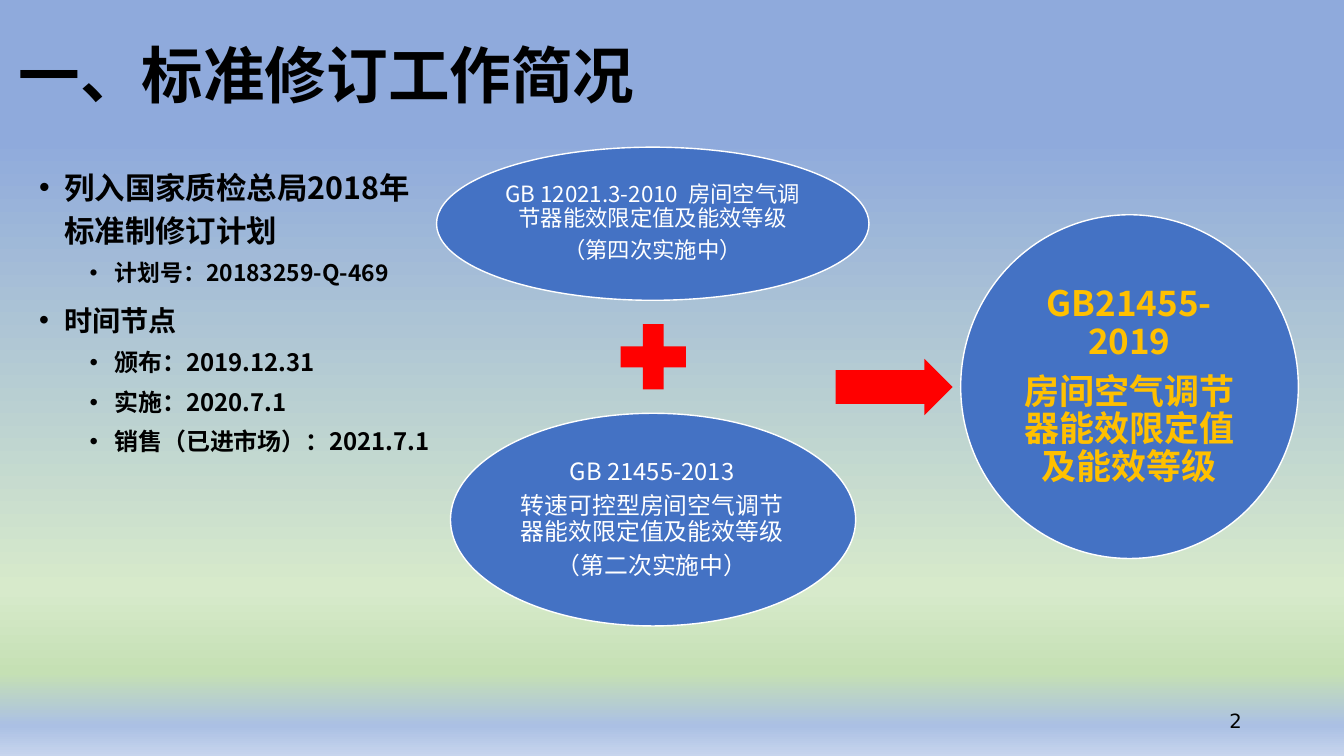
import pptx
import pptx.util
import pptx.oxml
import pptx.oxml.ns
import pptx.dml.color
import pptx.enum.shapes
import pptx.enum.text
from lxml import etree

Pt = pptx.util.Pt
RGB = pptx.dml.color.RGBColor
KIND = pptx.enum.shapes.MSO_SHAPE
ALIGN = pptx.enum.text.PP_ALIGN
MIDDLE = pptx.enum.text.MSO_ANCHOR.MIDDLE
qn = pptx.oxml.ns.qn

BLACK = RGB(0x00, 0x00, 0x00)
WHITE = RGB(0xFF, 0xFF, 0xFF)
BLUE = RGB(0x44, 0x72, 0xC4)
RED = RGB(0xFF, 0x00, 0x00)
GOLD = RGB(0xFF, 0xC0, 0x00)
SKY = [
    (0, RGB(0x8F, 0xAA, 0xDC)),
    (18, RGB(0x8F, 0xAA, 0xDC)),
    (78, RGB(0xD7, 0xEA, 0xCB)),
    (89, RGB(0xC5, 0xE0, 0xB4)),
    (96, RGB(0xAB, 0xC0, 0xE4)),
    (100, RGB(0xC7, 0xD5, 0xED)),
]
FONT = "Noto Sans CJK SC"

# Level, size and text of each point
POINTS = [
    (0, 21.7, "列入国家质检总局2018年标准制修订计划"),
    (1, 16.3, "计划号：20183259-Q-469"),
    (0, 20.1, "时间节点"),
    (1, 17.1, "颁布：2019.12.31"),
    (1, 17.1, "实施：2020.7.1"),
    (1, 17.1, "销售（已进市场）：2021.7.1"),
]


def paint_back(slide):
    fill = slide.background.fill
    fill.gradient()
    fill.gradient_angle = 270
    stops = slide.background._cSld.find(".//" + qn("a:gsLst"))
    for stop in list(stops):
        stops.remove(stop)
    for pos, color in SKY:
        stop = etree.SubElement(stops, qn("a:gs"), pos=str(pos * 1000))
        etree.SubElement(stop, qn("a:srgbClr"), val=str(color))


def add_run(para, text, size, color=BLACK, bold=False, face=FONT):
    run = para.add_run()
    run.text = text
    font = run.font
    font.size, font.bold, font.name = Pt(size), bold, face
    font.color.rgb = color
    etree.SubElement(run._r.get_or_add_rPr(), qn("a:ea"), typeface=face)


def set_indent(para, left, hang):
    props = para._p.get_or_add_pPr()
    props.set("marL", str(Pt(left)))
    props.set("indent", str(-Pt(hang)))
    return props


def place(shape, box):
    shape.left, shape.top, shape.width, shape.height = map(Pt, box)


def add_box(slide, box, inset=None):
    frame = slide.shapes.add_textbox(*map(Pt, box)).text_frame
    frame.word_wrap = True
    if inset is not None:
        frame.margin_left = frame.margin_right = Pt(inset)
        frame.margin_top = frame.margin_bottom = Pt(inset)
    return frame


def next_para(frame, index):
    return frame.add_paragraph() if index else frame.paragraphs[0]


def add_title(slide, text):
    title = slide.shapes.title
    place(title, (6, 3.6, 828, 104.4))
    title.text_frame.vertical_anchor = MIDDLE
    para = title.text_frame.paragraphs[0]
    para.alignment = ALIGN.LEFT
    para.line_spacing = 0.9
    set_indent(para, 88, 88)
    add_run(para, text, 44, bold=True)


def add_points(slide, box):
    frame = add_box(slide, box)
    for index, (level, size, text) in enumerate(POINTS):
        para = next_para(frame, index)
        para.level = level
        para.line_spacing = 1.18
        para.space_before = Pt(4 if level else 8)
        props = set_indent(para, 18 + 36 * level, 18)
        etree.SubElement(props, qn("a:buFont"), typeface="Arial")
        etree.SubElement(props, qn("a:buChar"), char="•")
        add_run(para, text, size, bold=True)


def add_form(slide, kind, box, color, edge=None):
    shape = slide.shapes.add_shape(kind, *map(Pt, box))
    shape.shadow.inherit = False
    shape.fill.solid()
    shape.fill.fore_color.rgb = color
    if edge is None:
        shape.line.fill.background()
    else:
        shape.line.color.rgb = edge
        shape.line.width = Pt(1)
    return shape


def add_oval(slide, oval, box, lines, size, color=WHITE, bold=False):
    add_form(slide, KIND.OVAL, oval, BLUE, WHITE)
    frame = add_box(slide, box, 1.5)
    frame.vertical_anchor = MIDDLE
    for index, text in enumerate(lines):
        para = next_para(frame, index)
        para.alignment = ALIGN.CENTER
        para.line_spacing = 0.9
        para.space_after = Pt(0.35 * size)
        add_run(para, text, size, color, bold)


def add_number(slide, text):
    frame = add_box(slide, (678.2, 500.4, 216, 28.8))
    frame.vertical_anchor = MIDDLE
    para = frame.paragraphs[0]
    para.alignment = ALIGN.RIGHT
    add_run(para, text, 14, face="DejaVu Sans")


def main():
    deck = pptx.Presentation()
    deck.slide_width, deck.slide_height = Pt(960), Pt(540)
    slide = deck.slides.add_slide(deck.slide_layouts[5])
    paint_back(slide)

    # Title, points and page number
    add_title(slide, "一、标准修订工作简况")
    add_points(slide, (20.9, 112.3, 300.2, 308.9))
    add_number(slide, "2")

    # Two earlier standards
    add_oval(slide, (311.8, 105.1, 308.9, 109.4), (357.1, 121, 218.2, 77),
             ["GB 12021.3-2010  房间空气调节器能效限定值及能效等级",
              "（第四次实施中）"], 16)
    add_form(slide, KIND.MATH_PLUS, (434.9, 223.2, 63.4, 63.4), RED)
    add_oval(slide, (321.8, 295.2, 289.4, 151.9), (363.6, 317.5, 204.5, 107.3),
             ["GB 21455-2013", "转速可控型房间空气调节器能效限定值及能效等级",
              "（第二次实施中）"], 17)

    # Merged standard
    arrow = add_form(slide, KIND.RIGHT_ARROW, (596.9, 256.3, 83.5, 40.3), RED)
    arrow.adjustments[0] = 0.6
    arrow.adjustments[1] = 0.5
    add_oval(slide, (686.2, 153.4, 241.2, 245.5), (721.4, 189.4, 170.6, 173.5),
             ["GB21455-2019", "房间空气调节器能效限定值及能效等级"],
             25, GOLD, True)

    deck.save("out.pptx")


if __name__ == "__main__":
    main()
